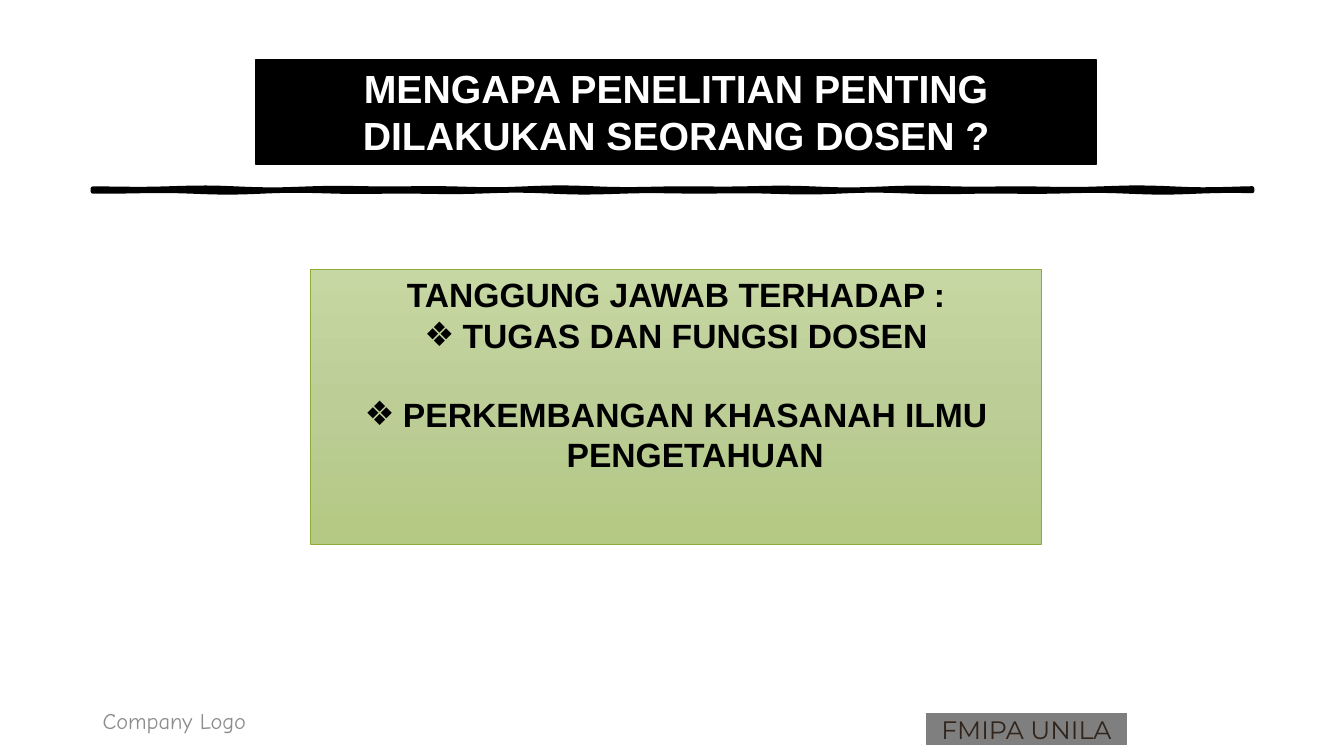
import copy
import math
import pptx
import pptx.util
import pptx.dml.color
import pptx.enum.shapes
import pptx.enum.text
import pptx.oxml
import pptx.oxml.ns

Inches = pptx.util.Inches
Pt = pptx.util.Pt
ALIGN = pptx.enum.text.PP_ALIGN
ANCHOR = pptx.enum.text.MSO_ANCHOR

COLORS = {
    "ink": "000000", "paper": "FFFFFF", "muted": "8C8C8C",
    "panel_top": "C7D7A3", "panel_middle": "BCCD96", "panel_bottom": "B4C983",
    "panel_edge": "91AB3B", "tag": "7F7F7F", "tag_text": "30241B",
}


def color(name):
    return pptx.dml.color.RGBColor.from_string(COLORS[name])


def place(shape, box):
    shape.left, shape.top, shape.width, shape.height = map(Inches, box)


def paint(shape, fill_name, line_name, line_width):
    if fill_name:
        shape.fill.solid()
        shape.fill.fore_color.rgb = color(fill_name)
    shape.line.color.rgb = color(line_name)
    shape.line.width = Pt(line_width)


def prepare_frame(shape, anchor):
    frame = shape.text_frame
    frame.word_wrap = True
    frame.auto_size = pptx.enum.text.MSO_AUTO_SIZE.NONE
    frame.vertical_anchor = anchor
    return frame


def write(paragraph, text, size, font, color_name, bold=False, align=ALIGN.CENTER):
    paragraph.alignment = align
    run = paragraph.add_run()
    run.text = text
    run.font.size = Pt(size)
    run.font.name = font
    run.font.bold = bold
    run.font.color.rgb = color(color_name)


def set_bullet(paragraph, character, indent):
    properties = paragraph._p.get_or_add_pPr()
    properties.set("marL", str(Inches(indent)))
    properties.set("indent", str(-Inches(indent)))
    tag = "a:buChar" if character else "a:buNone"
    bullet = pptx.oxml.parse_xml(f"<{tag} {pptx.oxml.ns.nsdecls('a')}/>")
    if character:
        bullet.set("char", character)
    properties.append(bullet)


def add_title(slide, box):
    title = slide.shapes.title
    place(title, box)
    paint(title, "ink", "ink", 1)
    frame = prepare_frame(title, ANCHOR.TOP)
    write(frame.paragraphs[0], "MENGAPA PENELITIAN PENTING DILAKUKAN SEORANG DOSEN ?",
          28, "Arial", "paper", True)


def add_brush_rule(slide, box):
    left, top, width, height = box
    steps = 92

    def edge(base, phase):
        return [(left + width * step / steps,
                 base + 0.01 * math.sin(step * 0.55 + phase) * math.sin(step * 0.13))
                for step in range(steps + 1)]

    outline = edge(top, 0) + edge(top + height, 2)[::-1]
    points = [(Inches(x), Inches(y)) for x, y in outline]
    builder = slide.shapes.build_freeform(*points[0])
    builder.add_line_segments(points[1:], close=True)
    rule = builder.convert_to_shape()
    rule.shadow.inherit = False
    paint(rule, "ink", "ink", 3)


def fill_panel(panel):
    panel.fill.gradient()
    panel.fill.gradient_angle = 270
    stop_list = panel._element.spPr.find(".//" + pptx.oxml.ns.qn("a:gsLst"))
    stop_list.insert(1, copy.deepcopy(stop_list[0]))
    names = ("panel_top", "panel_middle", "panel_bottom")
    for index, (stop, name) in enumerate(zip(panel.fill.gradient_stops, names)):
        stop.position = index / 2
        stop.color.rgb = color(name)


def add_responsibilities(slide, box):
    panel = slide.placeholders[1]
    place(panel, box)
    fill_panel(panel)
    paint(panel, None, "panel_edge", 0.5)
    frame = prepare_frame(panel, ANCHOR.TOP)
    entries = [
        ("TANGGUNG JAWAB TERHADAP :", None, 0, 0),
        ("TUGAS DAN FUNGSI DOSEN", "❖", 0.38, 0),
        ("PERKEMBANGAN KHASANAH ILMU PENGETAHUAN", "❖", 0.38, 28),
    ]
    for index, (text, character, indent, gap) in enumerate(entries):
        paragraph = frame.add_paragraph() if index else frame.paragraphs[0]
        paragraph.space_before = Pt(gap)
        set_bullet(paragraph, character, indent)
        write(paragraph, text, 24, "Arial", "ink", True)


def add_footer_label(slide, box):
    label = slide.shapes.add_textbox(*map(Inches, box))
    frame = prepare_frame(label, ANCHOR.MIDDLE)
    write(frame.paragraphs[0], "Company Logo", 16, "Comic Neue", "muted", align=ALIGN.LEFT)


def add_faculty_tag(slide, box):
    tag = slide.shapes.add_shape(pptx.enum.shapes.MSO_SHAPE.RECTANGLE, *map(Inches, box))
    tag.shadow.inherit = False
    paint(tag, "tag", "tag", 0.75)
    frame = prepare_frame(tag, ANCHOR.MIDDLE)
    frame.margin_left = frame.margin_right = frame.margin_top = frame.margin_bottom = 0
    write(frame.paragraphs[0], "FMIPA UNILA", 18, "Montserrat", "tag_text")


def main():
    presentation = pptx.Presentation()
    presentation.slide_width = Inches(13.33)
    presentation.slide_height = Inches(7.5)
    slide = presentation.slides.add_slide(presentation.slide_layouts[1])
    add_brush_rule(slide, (0.92, 1.87, 11.5, 0.03))
    add_footer_label(slide, (0.92, 6.95, 3, 0.4))
    add_title(slide, (2.54, 0.59, 8.33, 1.04))
    add_responsibilities(slide, (3.08, 2.67, 7.25, 2.73))
    add_faculty_tag(slide, (9.19, 7.08, 1.98, 0.31))
    presentation.save("out.pptx")


if __name__ == "__main__":
    main()
